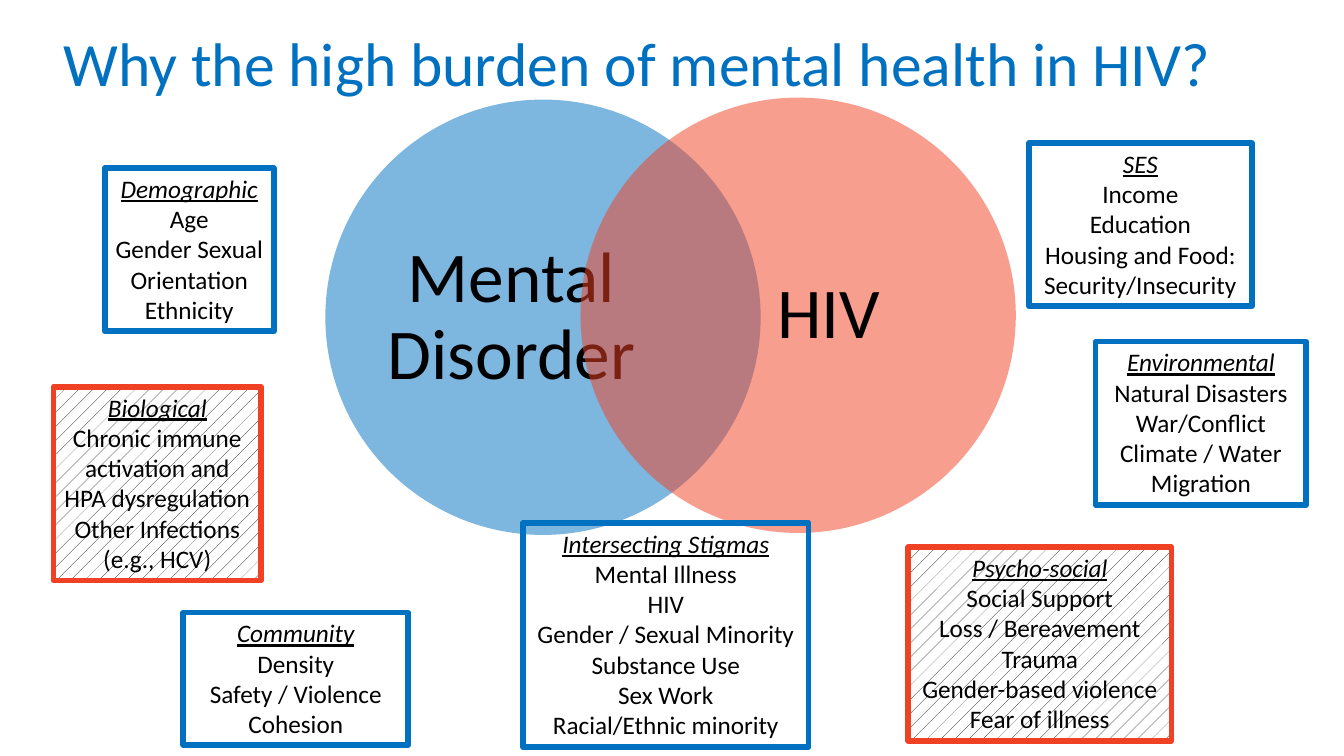
import pptx
import pptx.util
import pptx.dml.color
import pptx.enum.dml
import pptx.enum.shapes
import pptx.enum.text
import pptx.oxml.ns
import lxml.etree

Cm, Pt = pptx.util.Cm, pptx.util.Pt
BLUE = pptx.dml.color.RGBColor(0x00, 0x70, 0xC0)
RED = pptx.dml.color.RGBColor(0xF1, 0x41, 0x24)
BLACK = pptx.dml.color.RGBColor(0x00, 0x00, 0x00)
WHITE = pptx.dml.color.RGBColor(0xFF, 0xFF, 0xFF)
KIND = pptx.enum.shapes.MSO_SHAPE
ALIGN = pptx.enum.text.PP_ALIGN
MIDDLE = pptx.enum.text.MSO_ANCHOR.MIDDLE

deck = pptx.Presentation()
deck.slide_width, deck.slide_height = Cm(33.87), Cm(19.05)
slide = deck.slides.add_slide(deck.slide_layouts[6])
shapes = slide.shapes


def style(para, size, color, align):
    para.alignment = align
    para.font.name = "Calibri"
    para.font.size = Pt(size)
    para.font.color.rgb = color


def label(text, place, size, color, align):
    box = shapes.add_textbox(*map(Cm, place))
    frame = box.text_frame
    frame.word_wrap = True
    frame.vertical_anchor = MIDDLE
    para = frame.paragraphs[0]
    para.text = text
    para.line_spacing = 0.9
    style(para, size, color, align)
    return frame


# Overlapping circles, each with its label
circles = [
    ("Mental Disorder", BLUE, 8.2, 2.51, 9.73),
    ("HIV", RED, 14.63, 2.46, 17.73),
]
for text, color, left, top, inner in circles:
    disc = shapes.add_shape(KIND.OVAL, Cm(left), Cm(top), Cm(10.97), Cm(10.97))
    disc.shadow.inherit = False
    disc.fill.solid()
    disc.fill.fore_color.rgb = color
    disc.line.fill.background()
    tint = disc.fill._xPr.find(".//" + pptx.oxml.ns.qn("a:srgbClr"))
    lxml.etree.SubElement(tint, pptx.oxml.ns.qn("a:alpha"), val="51000")
    frame = label(text, (inner, top + 1.3, 6.32, 8.38), 51, BLACK, ALIGN.CENTER)
    frame.margin_left = frame.margin_right = 0
    frame.margin_top = frame.margin_bottom = 0

# Factor boxes: edge colour, place, heading and lines
factors = [
    (BLUE, (2.64, 4.24, 4.26, 4.11),
     ["Demographic", "Age", "Gender Sexual Orientation", "Ethnicity"]),
    (BLUE, (25.93, 3.61, 5.62, 4.11),
     ["SES", "Income", "Education", "Housing and Food: Security/Insecurity"]),
    (BLUE, (4.62, 15.44, 5.67, 3.33),
     ["Community", "Density", "Safety / Violence", "Cohesion"]),
    (BLUE, (27.61, 8.61, 5.31, 4.11),
     ["Environmental", "Natural Disasters", "War/Conflict",
      "Climate / Water", "Migration"]),
    (RED, (1.35, 9.75, 5.23, 4.88),
     ["Biological", "Chronic immune activation and HPA dysregulation "
      "Other Infections (e.g., HCV)"]),
    (RED, (22.89, 13.79, 6.63, 4.88),
     ["Psycho-social", "Social Support", "Loss / Bereavement", "Trauma",
      "Gender-based violence", "Fear of illness"]),
    (BLUE, (13.18, 13.18, 7.2, 5.64),
     ["Intersecting Stigmas", "Mental Illness", "HIV",
      "Gender / Sexual Minority", "Substance Use", "Sex Work",
      "Racial/Ethnic minority"]),
]
for color, place, lines in factors:
    box = shapes.add_shape(KIND.RECTANGLE, *map(Cm, place))
    box.shadow.inherit = False
    box.line.color.rgb = color
    box.line.width = Pt(4)
    if color == RED:
        box.fill.patterned()
        box.fill.pattern = pptx.enum.dml.MSO_PATTERN.PERCENT_5
        box.fill.fore_color.rgb = BLACK
        box.fill.back_color.rgb = WHITE
    else:
        box.fill.background()
    frame = box.text_frame
    frame.word_wrap = True
    frame.auto_size = pptx.enum.text.MSO_AUTO_SIZE.SHAPE_TO_FIT_TEXT
    frame.vertical_anchor = pptx.enum.text.MSO_ANCHOR.TOP
    frame.text = "\n".join(lines)
    for para in frame.paragraphs:
        style(para, 18, BLACK, ALIGN.CENTER)
    head = frame.paragraphs[0].font
    head.italic = head.underline = True

# Title
label("Why the high burden of mental health in HIV?",
      (1.35, -0.15, 31.6, 3.68), 44, BLUE, ALIGN.LEFT)

deck.save("out.pptx")
